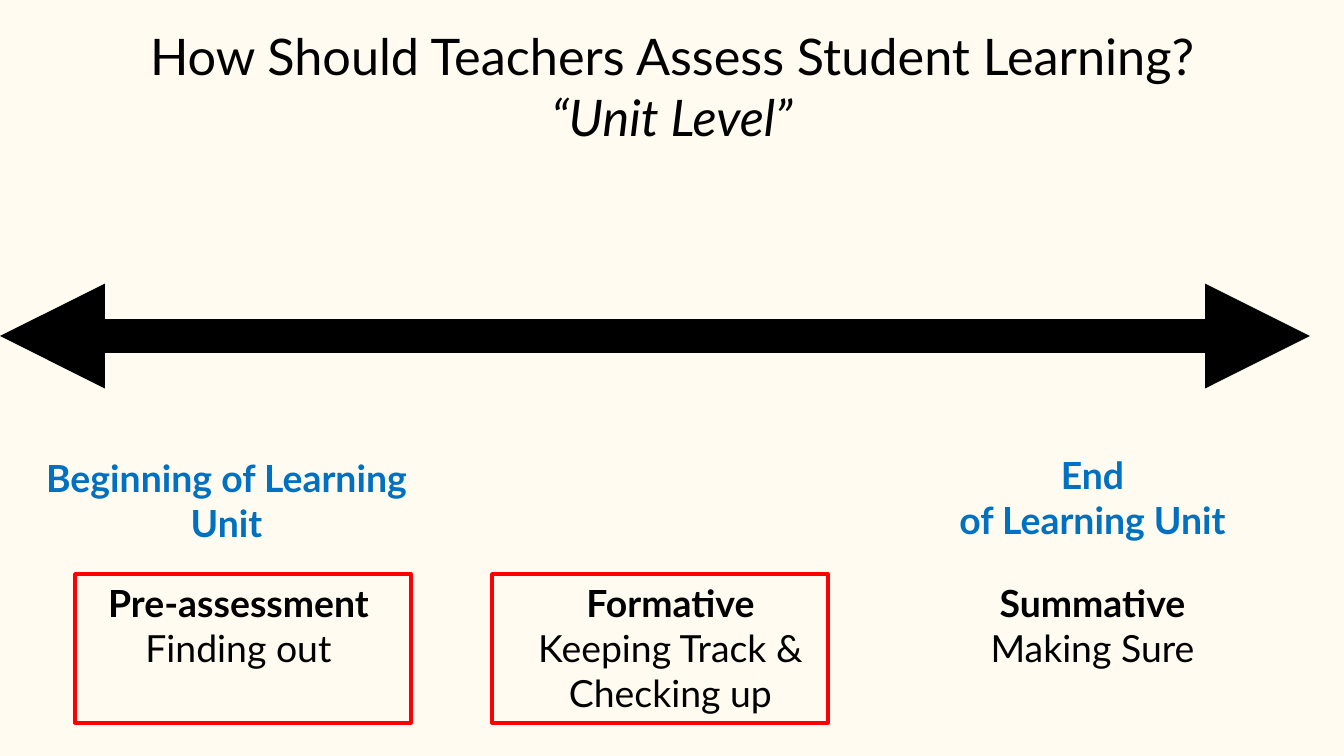
from dataclasses import dataclass

import pptx
import pptx.dml.color
import pptx.enum.shapes
import pptx.enum.text
import pptx.oxml
import pptx.oxml.ns
import pptx.util

EMU_PER_PX = 914400 / 134.4
FONT = "Lato"
BLACK, BLUE, RED, CREAM = "000000", "0070C0", "FF0000", "FFFBF0"
LABEL_WIDTH = 437
STAGE_TOP, BOX_WIDTH, BOX_HEIGHT = 574, 336, 149


@dataclass
class Line:
    text: str
    bold: bool = True
    color: str = BLACK


@dataclass
class Label:
    left: int
    top: int
    height: int
    lines: list[Line]


def px(length: int) -> pptx.util.Emu:
    return pptx.util.Emu(round(length * EMU_PER_PX))


def rgb(value: str) -> pptx.dml.color.RGBColor:
    return pptx.dml.color.RGBColor.from_string(value)


def format_paragraph(paragraph, size: int, color: str, bold: bool = False) -> None:
    paragraph.alignment = pptx.enum.text.PP_ALIGN.CENTER
    paragraph.font.name = FONT
    paragraph.font.size = pptx.util.Pt(size)
    paragraph.font.bold = bold
    paragraph.font.color.rgb = rgb(color)


def add_title(slide, heading: str, level: str) -> None:
    title = slide.shapes.title
    title.left, title.top, title.width, title.height = px(0), px(12), px(1344), px(126)
    frame = title.text_frame
    frame.word_wrap = True
    frame.auto_size = pptx.enum.text.MSO_AUTO_SIZE.NONE
    frame.vertical_anchor = pptx.enum.text.MSO_ANCHOR.TOP
    frame.margin_left = frame.margin_right = pptx.util.Inches(0.1)
    frame.margin_top = frame.margin_bottom = pptx.util.Inches(0.1)
    paragraph = frame.paragraphs[0]
    format_paragraph(paragraph, 27, BLACK)
    paragraph.space_before = pptx.util.Pt(0)
    paragraph.line_spacing = 1.0
    paragraph.add_run().text = heading
    paragraph.add_line_break()
    level_run = paragraph.add_run()
    level_run.text = level
    level_run.font.italic = True


def add_timeline(slide, start: int, end: int, y: int) -> None:
    timeline = slide.shapes.add_connector(
        pptx.enum.shapes.MSO_CONNECTOR.STRAIGHT, px(start), px(y), px(end), px(y))
    timeline.line.color.rgb = rgb(BLACK)
    timeline.line.width = pptx.util.Pt(18.75)
    stroke = timeline.line._get_or_add_ln()
    for tag in ("a:headEnd", "a:tailEnd"):
        arrowhead = pptx.oxml.parse_xml(f'<{tag} {pptx.oxml.ns.nsdecls("a")} type="triangle"/>')
        stroke.append(arrowhead)
    timeline._element.spPr.append(
        pptx.oxml.parse_xml(f'<a:effectLst {pptx.oxml.ns.nsdecls("a")}/>'))


def add_label(slide, label: Label) -> None:
    box = slide.shapes.add_textbox(
        px(label.left), px(label.top), px(LABEL_WIDTH), px(label.height))
    frame = box.text_frame
    frame.word_wrap = True
    for index, line in enumerate(label.lines):
        paragraph = frame.add_paragraph() if index else frame.paragraphs[0]
        paragraph.text = line.text
        format_paragraph(paragraph, 20, line.color, line.bold)


def add_highlight(slide, left: int) -> None:
    highlight = slide.shapes.add_shape(
        pptx.enum.shapes.MSO_SHAPE.RECTANGLE,
        px(left), px(STAGE_TOP), px(BOX_WIDTH), px(BOX_HEIGHT))
    highlight.shadow.inherit = False
    highlight.fill.background()
    highlight.line.color.rgb = rgb(RED)
    highlight.line.width = pptx.util.Pt(1.75)


def main() -> None:
    deck = pptx.Presentation()
    deck.slide_width, deck.slide_height = px(1344), px(756)
    slide = deck.slides.add_slide(deck.slide_layouts[5])
    slide.background.fill.solid()
    slide.background.fill.fore_color.rgb = rgb(CREAM)

    add_title(slide, "How Should Teachers Assess Student Learning?", "“Unit Level”")
    add_timeline(slide, 0, 1310, 336)

    # Ends of the unit, then the three kinds of assessment
    labels = [
        Label(8, 449, 103, [Line("Beginning of Learning Unit", color=BLUE)]),
        Label(874, 446, 103, [Line("End", color=BLUE), Line("of Learning Unit", color=BLUE)]),
        Label(20, STAGE_TOP, 103, [Line("Pre-assessment"), Line("Finding out", bold=False)]),
        Label(452, STAGE_TOP, BOX_HEIGHT,
              [Line("Formative"), Line("Keeping Track & Checking up", bold=False)]),
        Label(874, STAGE_TOP, 103, [Line("Summative"), Line("Making Sure", bold=False)]),
    ]
    for label in labels:
        add_label(slide, label)

    # Frames around pre-assessment and formative assessment
    for left in (75, 492):
        add_highlight(slide, left)

    deck.save("out.pptx")


if __name__ == "__main__":
    main()
